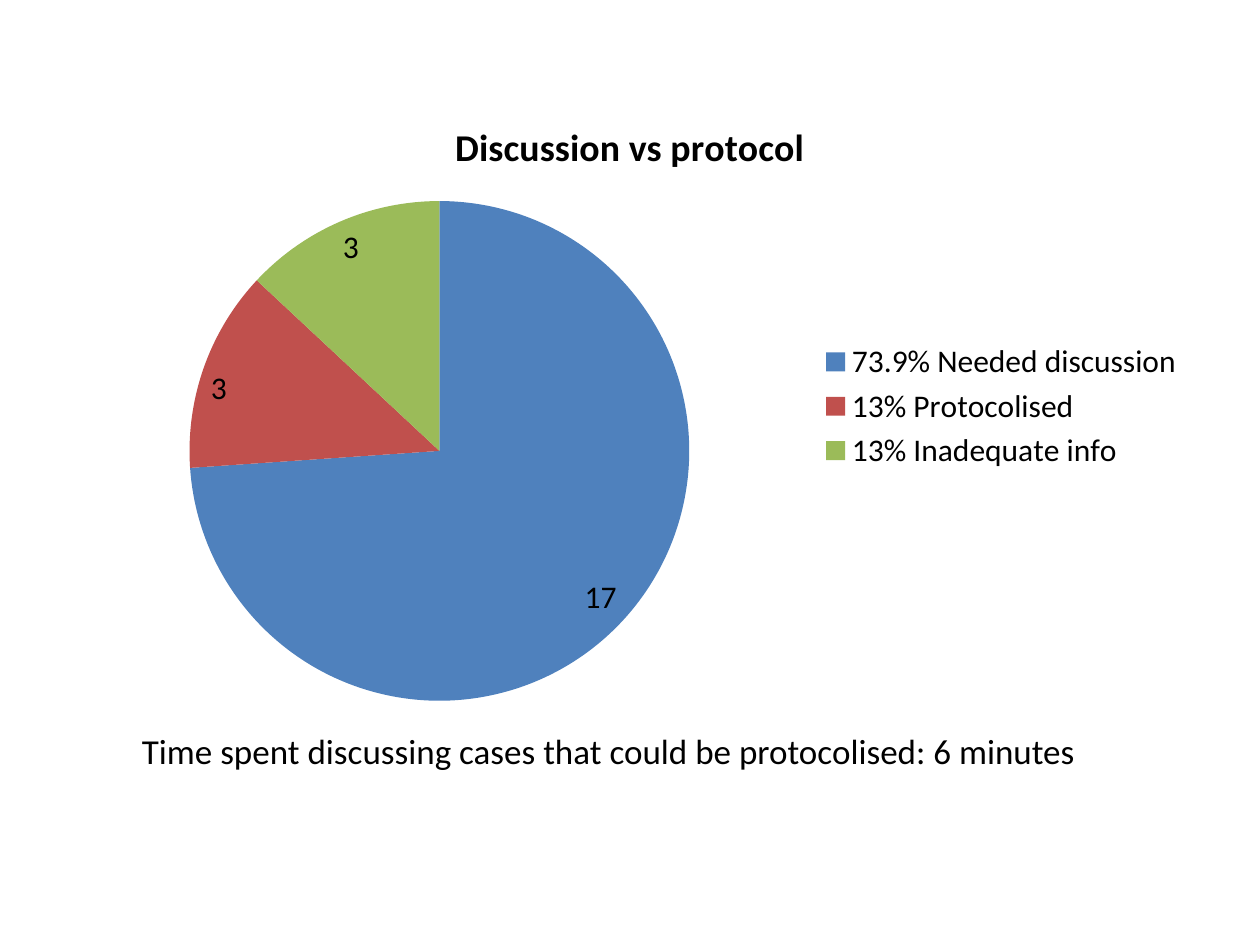
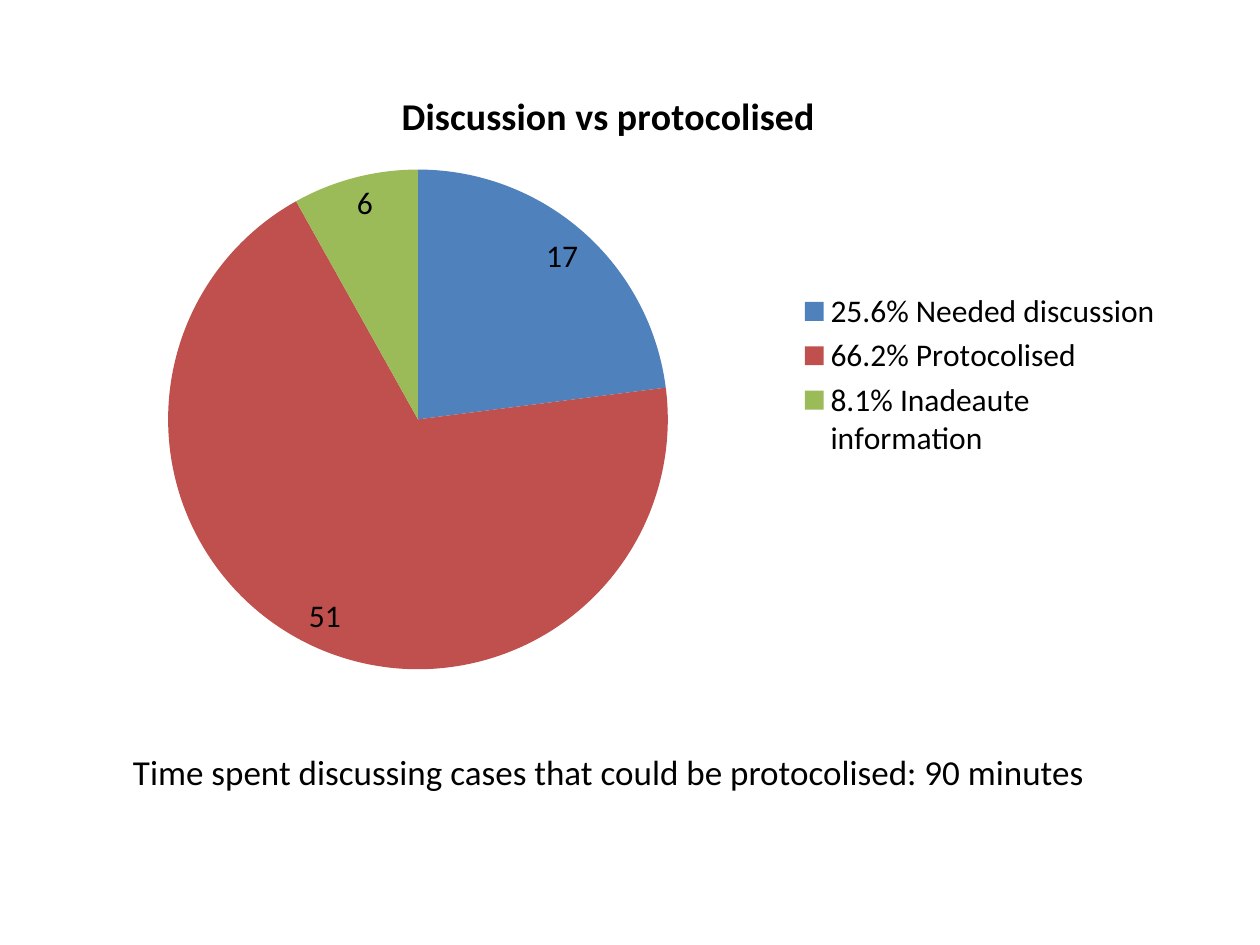
from pptx import Presentation
from pptx.chart.data import CategoryChartData
from pptx.dml.color import RGBColor
from pptx.enum.chart import XL_CHART_TYPE as ChartType
from pptx.enum.chart import XL_LABEL_POSITION as LabelPosition
from pptx.enum.chart import XL_LEGEND_POSITION as LegendPosition
from pptx.enum.text import MSO_ANCHOR as Anchor
from pptx.enum.text import PP_ALIGN as Align
from pptx.util import Inches, Pt

FONT = "Calibri"
COLORS = {
    "text": "000000",
    "discussion": "4F81BD",
    "protocolised": "C0504D",
    "inadequate": "9BBB59",
}
SLICE_COLORS = ("discussion", "protocolised", "inadequate")
TITLE_ONLY = 5
CAPTION_BOX = (0.33, 5.5, 9, 1.25)

SLIDES = [
    {
        "chart_title": "Discussion vs protocol",
        "chart_box": (0.5, 0.75, 9, 4.95),
        "shares": {
            "73.9% Needed discussion": 17,
            "13% Protocolised": 3,
            "13% Inadequate info": 3,
        },
        "caption": "Time spent discussing cases that could be protocolised: 6 minutes",
        "caption_bottom_margin": 0.39,
    },
    {
        "chart_title": "Discussion vs protocolised",
        "chart_box": (0.33, 0.5, 9, 4.95),
        "shares": {
            "25.6% Needed discussion": 17,
            "66.2% Protocolised": 51,
            "8.1% Inadeaute information": 6,
        },
        "caption": "Time spent discussing cases that could be protocolised: 90 minutes",
        "caption_bottom_margin": 0.05,
    },
]


def rgb(name):
    return RGBColor.from_string(COLORS[name])


def format_font(font, size, bold=False, color="text"):
    font.name = FONT
    font.size = Pt(size)
    font.bold = bold
    font.color.rgb = rgb(color)


def write_text(text_frame, text, size, bold=False, color="text", align=Align.CENTER):
    paragraph = text_frame.paragraphs[0]
    paragraph.alignment = align
    run = paragraph.add_run()
    run.text = text
    format_font(run.font, size, bold, color)


def place_caption(slide, text, box, bottom_margin):
    """Use the title placeholder as the line of text below the chart."""
    title = slide.shapes.title
    title.left, title.top, title.width, title.height = map(Inches, box)
    text_frame = title.text_frame
    text_frame.word_wrap = True
    text_frame.vertical_anchor = Anchor.MIDDLE
    text_frame.margin_bottom = Inches(bottom_margin)
    write_text(text_frame, text, size=20)


def add_pie(slide, title, shares, box):
    chart_data = CategoryChartData()
    chart_data.categories = list(shares)
    chart_data.add_series(title, list(shares.values()))
    chart = slide.shapes.add_chart(
        ChartType.PIE, *map(Inches, box), chart_data
    ).chart
    format_font(chart.font, 18)

    chart.has_title = True
    write_text(chart.chart_title.text_frame, title, size=21.6, bold=True)
    chart.chart_title.include_in_layout = False

    chart.has_legend = True
    chart.legend.position = LegendPosition.RIGHT
    chart.legend.include_in_layout = False
    format_font(chart.legend.font, 18)

    plot = chart.plots[0]
    plot.vary_by_categories = True
    plot.has_data_labels = True
    labels = plot.data_labels
    labels.show_value = True
    labels.show_percentage = False
    labels.position = LabelPosition.INSIDE_END
    format_font(labels.font, 18)

    for index, color in enumerate(SLICE_COLORS):
        fill = plot.series[0].points[index].format.fill
        fill.solid()
        fill.fore_color.rgb = rgb(color)


def add_chart_slide(presentation, content):
    slide = presentation.slides.add_slide(presentation.slide_layouts[TITLE_ONLY])
    add_pie(slide, content["chart_title"], content["shares"], content["chart_box"])
    place_caption(
        slide, content["caption"], CAPTION_BOX, content["caption_bottom_margin"]
    )


def main():
    presentation = Presentation()
    presentation.slide_width = Inches(10)
    presentation.slide_height = Inches(7.5)
    for content in SLIDES:
        add_chart_slide(presentation, content)
    presentation.save("out.pptx")


if __name__ == "__main__":
    main()
